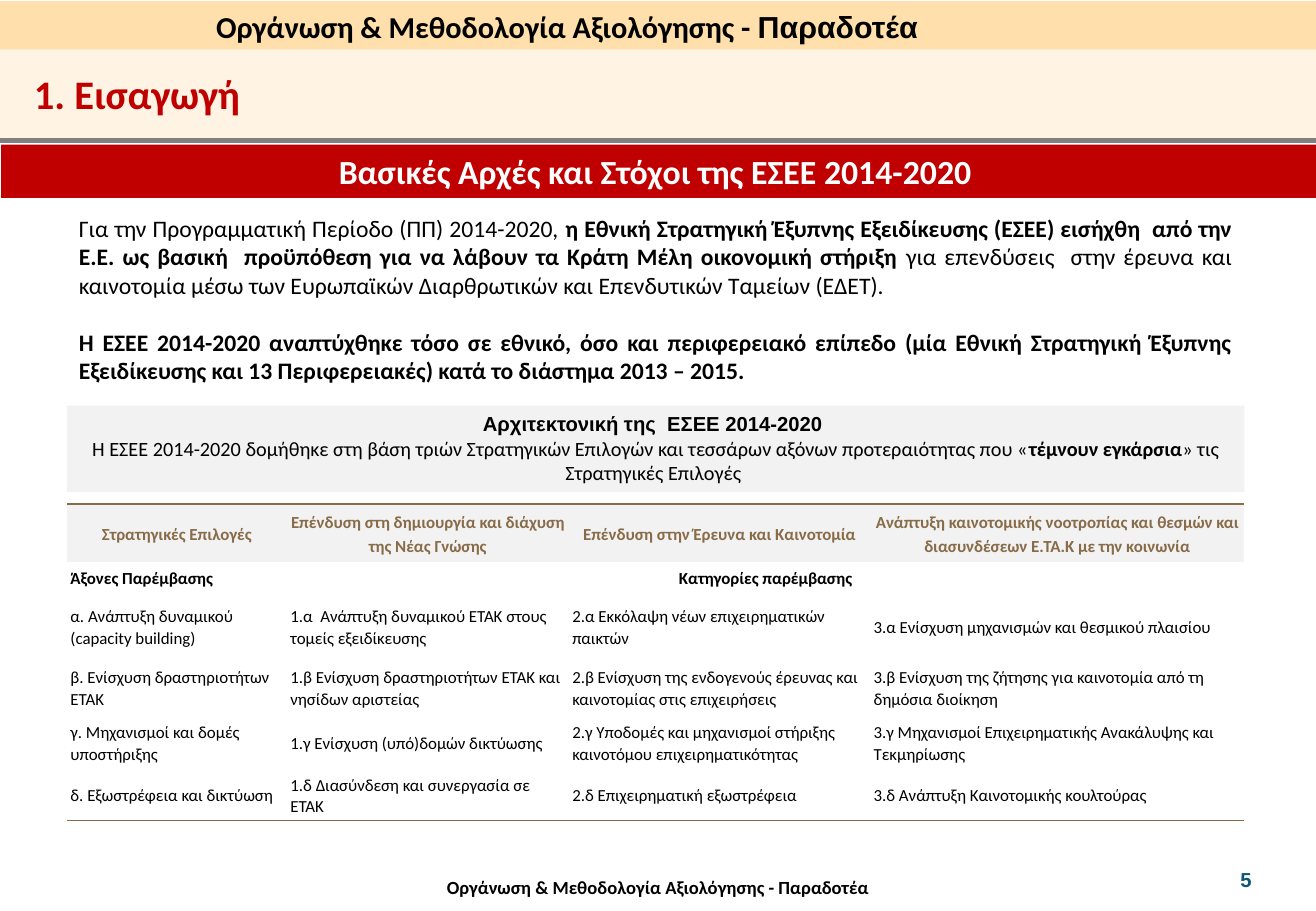
import pptx
import pptx.util
import pptx.dml.color
import pptx.enum.shapes
import pptx.enum.text
import pptx.oxml
import pptx.oxml.ns
from lxml import etree

EMU_PER_PX = 9144
SLIDE_SIZE = (1083, 750)

RGBColor = pptx.dml.color.RGBColor
BLACK = RGBColor(0x00, 0x00, 0x00)
WHITE = RGBColor(0xFF, 0xFF, 0xFF)
RED = RGBColor(0xC0, 0x00, 0x00)
TEAL = RGBColor(0x0E, 0x57, 0x72)
BROWN = RGBColor(0x88, 0x6B, 0x48)
GREY = RGBColor(0x80, 0x80, 0x80)
PALE_GREY = RGBColor(0xF2, 0xF2, 0xF2)
SAND = RGBColor(0xFF, 0xDF, 0xAB)
PALE_SAND = RGBColor(0xFF, 0xE9, 0xCA)

ALIGN = pptx.enum.text.PP_ALIGN
ANCHOR = pptx.enum.text.MSO_ANCHOR
NO_TABLE_STYLE = "{2D5ABB26-0587-4C30-8999-92F81FD0307C}"

COLUMN_WIDTHS = [181, 232, 248, 308]
ROW_HEIGHTS = [48, 26, 55, 45, 45, 26]
TABLE_ROWS = [
    ["Στρατηγικές Επιλογές",
     "Επένδυση στη δημιουργία και διάχυση της Νέας Γνώσης",
     "Επένδυση στην Έρευνα και Καινοτομία",
     "Ανάπτυξη καινοτομικής νοοτροπίας και θεσμών και διασυνδέσεων Ε.ΤΑ.Κ με την κοινωνία"],
    ["Άξονες Παρέμβασης", "Κατηγορίες παρέμβασης"],
    ["α. Ανάπτυξη δυναμικού (capacity building)",
     "1.α  Ανάπτυξη δυναμικού ΕΤΑΚ στους τομείς εξειδίκευσης",
     "2.α Εκκόλαψη νέων επιχειρηματικών παικτών",
     "3.α Ενίσχυση μηχανισμών και θεσμικού πλαισίου"],
    ["β. Ενίσχυση δραστηριοτήτων ΕΤΑΚ",
     "1.β Ενίσχυση δραστηριοτήτων ΕΤΑΚ και νησίδων αριστείας",
     "2.β Ενίσχυση της ενδογενούς έρευνας και καινοτομίας στις επιχειρήσεις",
     "3.β Ενίσχυση της ζήτησης για καινοτομία από τη δημόσια διοίκηση"],
    ["γ. Μηχανισμοί και δομές υποστήριξης",
     "1.γ Ενίσχυση (υπό)δομών δικτύωσης",
     "2.γ Υποδομές και μηχανισμοί στήριξης καινοτόμου επιχειρηματικότητας",
     "3.γ Μηχανισμοί Επιχειρηματικής Ανακάλυψης και Τεκμηρίωσης"],
    ["δ. Εξωστρέφεια και δικτύωση",
     "1.δ Διασύνδεση και συνεργασία σε ΕΤΑΚ",
     "2.δ Επιχειρηματική εξωστρέφεια",
     "3.δ Ανάπτυξη Καινοτομικής κουλτούρας"],
]


def px(*lengths):
    return [pptx.util.Emu(length * EMU_PER_PX) for length in lengths]


def text_format(size, bold=True, color=BLACK, name="Calibri"):
    return {"size": pptx.util.Pt(size), "bold": bold, "color": color, "name": name}


def set_attributes(target, values):
    for name, value in values.items():
        setattr(target, name, value)


def add_run(paragraph, text, values):
    font = paragraph.add_run()
    font.text = text
    font = font.font
    for name, value in values.items():
        if name == "color":
            font.color.rgb = value
        else:
            setattr(font, name, value)


def write_text(frame, paragraphs, paragraph_format, gap=0):
    """Fill a text frame; each paragraph is a list of (text, format) runs."""
    for index, runs in enumerate(paragraphs):
        paragraph = frame.add_paragraph() if index else frame.paragraphs[0]
        set_attributes(paragraph, paragraph_format)
        if index and gap:
            paragraph.space_before = pptx.util.Pt(gap)
        for text, values in runs:
            add_run(paragraph, text, values)


def add_text(slide, box, paragraphs, align=ALIGN.LEFT, gap=0, frame_format=None):
    frame = slide.shapes.add_textbox(*px(*box)).text_frame
    set_attributes(frame, {"word_wrap": True, **(frame_format or {})})
    write_text(frame, paragraphs, {"alignment": align}, gap)


def add_band(slide, box, color, paragraphs=(), opacity=100):
    rectangle = pptx.enum.shapes.MSO_SHAPE.RECTANGLE
    shape = slide.shapes.add_shape(rectangle, *px(*box))
    shape.shadow.inherit = False
    shape.fill.solid()
    shape.fill.fore_color.rgb = color
    shape.line.fill.background()
    if opacity < 100:
        fill_color = shape._element.spPr.find(".//" + pptx.oxml.ns.qn("a:srgbClr"))
        alpha = etree.SubElement(fill_color, pptx.oxml.ns.qn("a:alpha"))
        alpha.set("val", str(opacity * 1000))
    shape.text_frame.vertical_anchor = ANCHOR.TOP
    write_text(shape.text_frame, paragraphs, {"alignment": ALIGN.CENTER})


def add_rule(slide, ends, color, width):
    straight = pptx.enum.shapes.MSO_CONNECTOR.STRAIGHT
    connector = slide.shapes.add_connector(straight, *px(*ends))
    connector.line.color.rgb = color
    connector.line.width = pptx.util.Pt(width)
    etree.SubElement(connector._element.spPr, pptx.oxml.ns.qn("a:effectLst"))


def add_cell_border(cell, side, color):
    border = pptx.oxml.parse_xml(
        f'<a:ln{side} {pptx.oxml.ns.nsdecls("a")} w="12700"><a:solidFill>'
        f'<a:srgbClr val="{color}"/></a:solidFill></a:ln{side}>')
    cell._tc.get_or_add_tcPr().insert(0, border)


def fill_cell(cell, text, row, column):
    is_header = row == 0
    is_bold = row < 2
    centred = is_header or (row == 1 and column == 1)
    margin, = px(3)
    sides = ("left", "right", "top", "bottom")
    set_attributes(cell, {f"margin_{side}": margin for side in sides})
    cell.vertical_anchor = ANCHOR.MIDDLE
    paragraph_format = {
        "alignment": ALIGN.CENTER if centred else ALIGN.LEFT,
        "line_spacing": 1.15 if is_header else 1.07,
    }
    values = text_format(10, is_bold, BROWN if is_header else BLACK)
    write_text(cell.text_frame, [[(text, values)]], paragraph_format)


def add_strategy_table(slide):
    row_count, column_count = len(ROW_HEIGHTS), len(COLUMN_WIDTHS)
    box = px(55, 415, sum(COLUMN_WIDTHS), sum(ROW_HEIGHTS))
    table = slide.shapes.add_table(row_count, column_count, *box).table
    set_attributes(table, {"first_row": False, "horz_banding": False})
    table._tbl.tblPr.find(pptx.oxml.ns.qn("a:tableStyleId")).text = NO_TABLE_STYLE
    for column, width in zip(table.columns, px(*COLUMN_WIDTHS)):
        column.width = width
    for row, height in zip(table.rows, px(*ROW_HEIGHTS)):
        row.height = height
    table.cell(1, 1).merge(table.cell(1, column_count - 1))

    for row, texts in enumerate(TABLE_ROWS):
        for column, text in enumerate(texts):
            fill_cell(table.cell(row, column), text, row, column)
    for cell in table.iter_cells():
        cell.fill.background()
    for column in range(column_count):
        header = table.cell(0, column)
        header.fill.solid()
        header.fill.fore_color.rgb = PALE_GREY
        add_cell_border(header, "T", BROWN)
        add_cell_border(table.cell(row_count - 1, column), "B", BROWN)


def add_frame(slide):
    """Footer, page number and the heading bands."""
    no_margins = {f"margin_{side}": 0 for side in ("left", "right", "top", "bottom")}
    add_text(slide, (282, 721, 519, 18),
             [[("Οργάνωση & Μεθοδολογία Αξιολόγησης - Παραδοτέα", text_format(11))]],
             ALIGN.CENTER, frame_format=no_margins)
    add_text(slide, (1011, 709, 52, 30),
             [[("5", text_format(12, color=TEAL, name="Arial"))]])
    add_band(slide, (0, 1, 1083, 40), SAND)
    add_band(slide, (0, 41, 1083, 75), PALE_SAND, opacity=50)
    add_rule(slide, (-1, 116, 1083, 116), GREY, 3)


def main():
    presentation = pptx.Presentation()
    presentation.slide_width, presentation.slide_height = px(*SLIDE_SIZE)
    slide = presentation.slides.add_slide(presentation.slide_layouts[6])
    add_frame(slide)

    add_band(slide, (1, 119, 1083, 44), RED,
             [[("Βασικές Αρχές και Στόχοι της ΕΣΕΕ 2014-2020 ", text_format(20, color=WHITE))]])
    plain, bold = text_format(14, False), text_format(14)
    add_text(slide, (55, 171, 969, 151), [
        [("Για την Προγραμματική Περίοδο (ΠΠ) 2014-2020, ", plain),
         ("η Εθνική Στρατηγική Έξυπνης Εξειδίκευσης (ΕΣΕΕ) εισήχθη  από την Ε.Ε. ως βασική  "
          "προϋπόθεση για να λάβουν τα Κράτη Μέλη οικονομική στήριξη ", bold),
         ("για επενδύσεις  στην έρευνα και καινοτομία μέσω των Ευρωπαϊκών Διαρθρωτικών "
          "και Επενδυτικών Ταμείων (ΕΔΕΤ).", plain)],
        [("Η ΕΣΕΕ 2014-2020 αναπτύχθηκε τόσο σε εθνικό, όσο και περιφερειακό επίπεδο (μία Εθνική "
          "Στρατηγική Έξυπνης Εξειδίκευσης και 13 Περιφερειακές) κατά το διάστημα 2013 – 2015.",
          bold)],
    ], ALIGN.JUSTIFY, gap=17)

    add_strategy_table(slide)
    plain, bold = text_format(12, False), text_format(12)
    add_band(slide, (55, 334, 969, 71), PALE_GREY, [
        [("Αρχιτεκτονική της  ΕΣΕΕ 2014-2020 ", text_format(12, name="Arial"))],
        [("Η ΕΣΕΕ 2014-2020 δομήθηκε στη βάση τριών Στρατηγικών Επιλογών και τεσσάρων αξόνων "
          "προτεραιότητας που «", plain),
         ("τέμνουν εγκάρσια", bold),
         ("» τις Στρατηγικές Επιλογές ", plain)],
    ])
    add_text(slide, (168, 2, 855, 40), [
        [("Οργάνωση & Μεθοδολογία Αξιολόγησης - ", text_format(18)),
         ("Παραδοτέα", text_format(18, name="Arial"))]])
    add_text(slide, (18, 52, 218, 50), [[("1. Εισαγωγή", text_format(24, color=RED))]],
             frame_format={"word_wrap": False})
    presentation.save("out.pptx")


if __name__ == "__main__":
    main()
